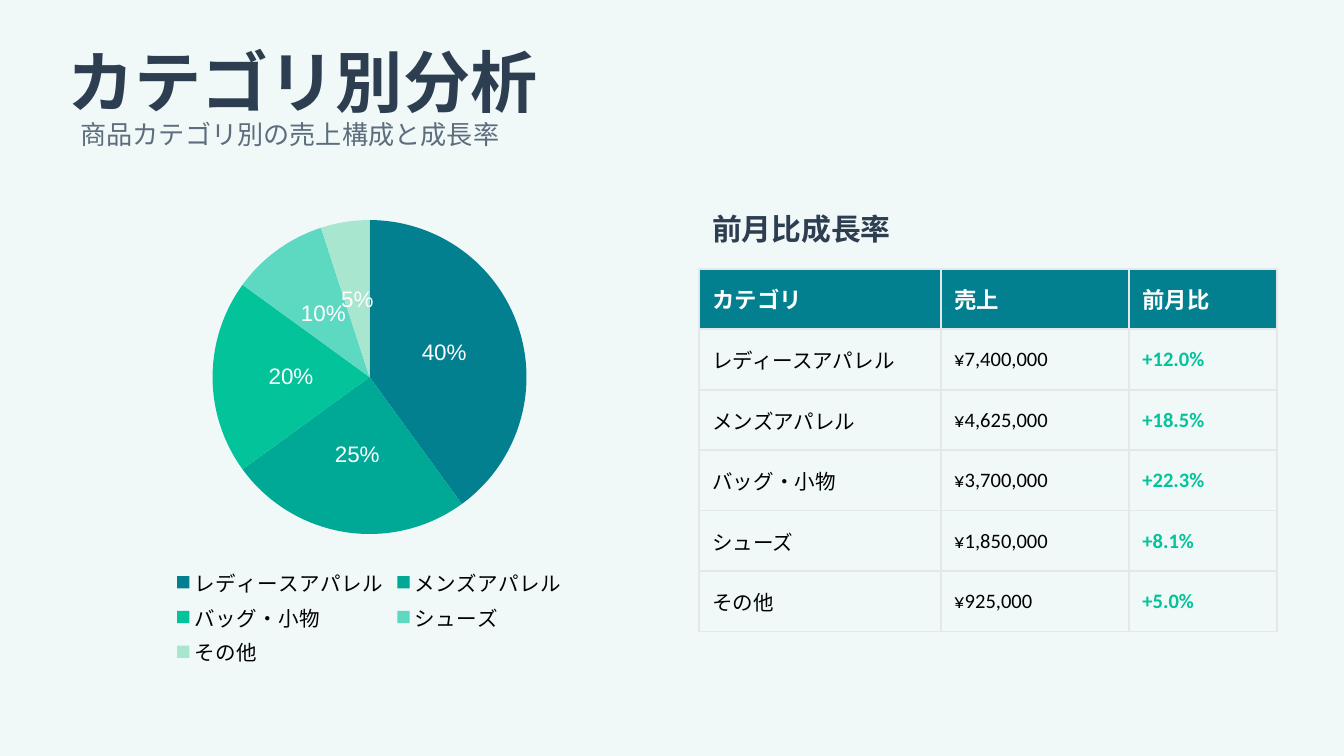
from dataclasses import dataclass
from typing import NamedTuple

from lxml.etree import SubElement
from pptx import Presentation
from pptx.chart.data import CategoryChartData
from pptx.dml.color import RGBColor
from pptx.enum.chart import XL_CHART_TYPE as ChartType
from pptx.enum.chart import XL_LABEL_POSITION as LabelPosition
from pptx.enum.chart import XL_LEGEND_POSITION as LegendPosition
from pptx.enum.text import MSO_ANCHOR as Anchor
from pptx.oxml.ns import qn
from pptx.slide import Slide
from pptx.table import _Cell as Cell
from pptx.text.text import TextFrame
from pptx.util import Inches, Pt

BACKGROUND = RGBColor(0xF0, 0xF8, 0xF8)
NAVY = RGBColor(0x2C, 0x3E, 0x50)
SLATE = RGBColor(0x5D, 0x6D, 0x7E)
TEAL = RGBColor(0x02, 0x80, 0x90)
JADE = RGBColor(0x00, 0xA8, 0x96)
GREEN = RGBColor(0x02, 0xC3, 0x9A)
AQUA = RGBColor(0x5D, 0xD9, 0xC1)
MINT = RGBColor(0xA8, 0xE6, 0xCF)
BORDER = RGBColor(0xE5, 0xE7, 0xEB)
BLACK = RGBColor(0, 0, 0)
WHITE = RGBColor(0xFF, 0xFF, 0xFF)

SLIDE_WIDTH = Inches(10)
SLIDE_HEIGHT = Inches(5.625)
GRID_COLUMNS = 100
UNIT = SLIDE_WIDTH / GRID_COLUMNS


class Area(NamedTuple):
    column: float
    row: float
    columns: float
    rows: float

    def lengths(self) -> list[int]:
        return [round(value * UNIT) for value in self]


@dataclass(frozen=True)
class Heading:
    text: str
    area: Area
    font: str
    size: float
    color: RGBColor
    bold: bool = False
    padded: bool = True


@dataclass(frozen=True)
class Category:
    name: str
    share: int
    sales: str
    growth: str
    color: RGBColor


HEADINGS = [
    Heading("カテゴリ別分析", Area(5, 3, 90, 6), "Montserrat", 36, NAVY, True, False),
    Heading("商品カテゴリ別の売上構成と成長率", Area(5, 8.5, 90, 3), "Calibri", 14, SLATE),
    Heading("前月比成長率", Area(52, 15, 43, 4), "Arial", 16, NAVY, True),
]
CATEGORIES = [
    Category("レディースアパレル", 40, "¥7,400,000", "+12.0%", TEAL),
    Category("メンズアパレル", 25, "¥4,625,000", "+18.5%", JADE),
    Category("バッグ・小物", 20, "¥3,700,000", "+22.3%", GREEN),
    Category("シューズ", 10, "¥1,850,000", "+8.1%", AQUA),
    Category("その他", 5, "¥925,000", "+5.0%", MINT),
]
TABLE_HEADER = ("カテゴリ", "売上", "前月比")
TABLE_COLUMNS = (18, 14, 11)
TABLE_ROW = 4.5
CHART_AREA = Area(5, 15, 45, 35)
TABLE_AREA = Area(52, 20, sum(TABLE_COLUMNS), TABLE_ROW * (len(CATEGORIES) + 1))


def write(frame: TextFrame, text: str, *, font: str = "Calibri", size: float = 11,
          color: RGBColor = BLACK, bold: bool = False) -> None:
    span = frame.paragraphs[0].add_run()
    span.text = text
    span.font.name = font
    span.font.size = Pt(size)
    span.font.bold = bold
    span.font.color.rgb = color


def draw_heading(page: Slide, heading: Heading) -> None:
    box = page.shapes.add_textbox(*heading.area.lengths())
    frame = box.text_frame
    frame.word_wrap = True
    frame.vertical_anchor = Anchor.MIDDLE
    if not heading.padded:
        frame.margin_left = frame.margin_right = 0
        frame.margin_top = frame.margin_bottom = 0
    write(frame, heading.text, font=heading.font, size=heading.size,
          color=heading.color, bold=heading.bold)


def draw_share_chart(page: Slide, area: Area, categories: list[Category]) -> None:
    data = CategoryChartData()
    data.categories = [category.name for category in categories]
    data.add_series("Series 1", [category.share for category in categories])
    chart = page.shapes.add_chart(ChartType.PIE, *area.lengths(), data).chart
    chart.has_title = False
    chart.font.name = "Calibri"
    chart.font.size = Pt(10)
    chart.font.color.rgb = BLACK
    chart.has_legend = True
    chart.legend.position = LegendPosition.BOTTOM
    chart.legend.include_in_layout = False
    chart.legend.font.name = "Calibri"
    chart.legend.font.size = Pt(11)

    plot = chart.plots[0]
    plot.vary_by_categories = True
    for index, category in enumerate(categories):
        fill = plot.series[0].points[index].format.fill
        fill.solid()
        fill.fore_color.rgb = category.color
    plot.has_data_labels = True
    labels = plot.data_labels
    labels.show_percentage = True
    labels.show_value = False
    labels.number_format = "0%"
    labels.number_format_is_linked = False
    labels.position = LabelPosition.CENTER
    labels.font.name = "Arial"
    labels.font.size = Pt(12)
    labels.font.color.rgb = WHITE


def draw_borders(cell: Cell) -> None:
    properties = cell._tc.get_or_add_tcPr()
    for side in ("a:lnL", "a:lnR", "a:lnT", "a:lnB"):
        line = SubElement(properties, qn(side), w=str(Pt(1)))
        fill = SubElement(line, qn("a:solidFill"))
        SubElement(fill, qn("a:srgbClr"), val=str(BORDER))


def draw_growth_table(page: Slide, area: Area, categories: list[Category]) -> None:
    rows = [TABLE_HEADER] + [(item.name, item.sales, item.growth) for item in categories]
    table = page.shapes.add_table(len(rows), len(TABLE_COLUMNS), *area.lengths()).table
    table.horz_banding = False
    for column, width in zip(table.columns, TABLE_COLUMNS):
        column.width = round(width * UNIT)
    for row_index, values in enumerate(rows):
        table.rows[row_index].height = round(TABLE_ROW * UNIT)
        for column_index, text in enumerate(values):
            cell = table.cell(row_index, column_index)
            cell.vertical_anchor = Anchor.MIDDLE
            draw_borders(cell)
            if row_index == 0:
                cell.fill.solid()
                cell.fill.fore_color.rgb = TEAL
                write(cell.text_frame, text, size=12, color=WHITE, bold=True)
            else:
                cell.fill.background()
                is_growth = column_index == len(values) - 1
                write(cell.text_frame, text, color=GREEN if is_growth else BLACK,
                      bold=is_growth)


def main() -> None:
    deck = Presentation()
    deck.slide_width = SLIDE_WIDTH
    deck.slide_height = SLIDE_HEIGHT
    page = deck.slides.add_slide(deck.slide_layouts[6])
    page.background.fill.solid()
    page.background.fill.fore_color.rgb = BACKGROUND
    for heading in HEADINGS:
        draw_heading(page, heading)
    draw_share_chart(page, CHART_AREA, CATEGORIES)
    draw_growth_table(page, TABLE_AREA, CATEGORIES)
    deck.save("out.pptx")


if __name__ == "__main__":
    main()
